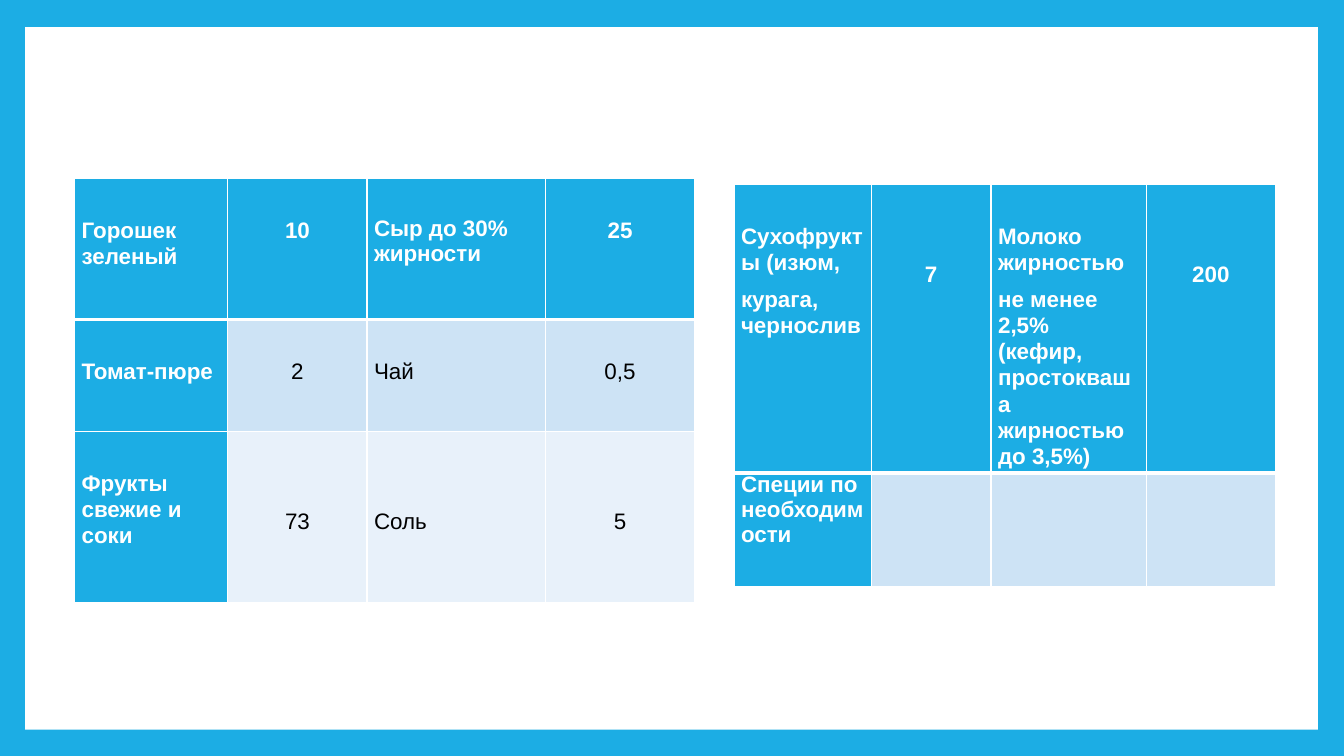
from lxml.etree import SubElement as Sub
from pptx import Presentation
from pptx.dml.color import RGBColor
from pptx.enum.shapes import MSO_SHAPE as Shape
from pptx.enum.text import PP_ALIGN as Align
from pptx.oxml.ns import qn
from pptx.util import Inches, Pt

BLUE = RGBColor(0x1C, 0xAD, 0xE4)
WHITE = RGBColor(0xFF, 0xFF, 0xFF)
BLACK = RGBColor(0, 0, 0)
BANDS = [RGBColor(0xE8, 0xF1, 0xFA), RGBColor(0xCD, 0xE3, 0xF5)]
GAP = 0.38

LEFT = [
    [("Горошек зеленый", 1), ("10", 1), ("Сыр до 30% жирности", 1, 1.0), ("25", 1)],
    [("Томат-пюре", 1), ("2", 1), ("Чай", 1), ("0,5", 1)],
    [("Фрукты свежие и соки", 1), ("73", 2), ("Соль", 2), ("5", 2)],
]
RIGHT = [
    [("Сухофрукты (изюм,\nкурага, чернослив", 1), ("7", 2),
     ("Молоко жирностью\nне менее 2,5% (кефир, простокваша жирностью до 3,5%)", 1),
     ("200", 2)],
    [("Специи по необходимости", 0, 1.0), ("", 0), ("", 0), ("", 0)],
]


def write(frame, text, *, color=BLACK, bold=False, align=Align.LEFT, lead=1.05):
    """Fill a text frame, one paragraph for each line of text."""
    for i, line in enumerate(text.split("\n")):
        para = frame.paragraphs[0] if i == 0 else frame.add_paragraph()
        para.alignment, para.line_spacing = align, lead
        para.space_after = Pt(8 if lead > 1 else 0)
        run = para.add_run()
        run.text = line
        font = run.font
        font.name, font.size, font.bold = "Arial", Pt(16), bold
        font.color.rgb = color


class Deck:
    """Hold the style and the current slide."""

    def __init__(self):
        self.prs = Presentation()
        self.prs.slide_width, self.prs.slide_height = Inches(13.33), Inches(7.5)
        self.slide = self.prs.slides.add_slide(self.prs.slide_layouts[6])
        fill = self.slide.background.fill
        fill.solid()
        fill.fore_color.rgb = BLUE

    def panel(self, x, y, w, h):
        """Add the plain white sheet."""
        box = self.slide.shapes.add_shape(
            Shape.RECTANGLE, Inches(x), Inches(y), Inches(w), Inches(h))
        box.shadow.inherit = False
        box.fill.solid()
        box.fill.fore_color.rgb = WHITE
        box.line.fill.background()

    def edge(self, cell, row):
        """Draw white cell borders, thick between head and body."""
        props = cell._tc.get_or_add_tcPr()
        wide = {"T": row == 1, "B": row == 0}
        for side in "LRTB":
            width = Pt(3 if wide.get(side) else 1)
            line = Sub(props, qn(f"a:ln{side}"), w=str(width))
            Sub(Sub(line, qn("a:solidFill")), qn("a:srgbClr"), val=str(WHITE))

    def cell(self, cell, row, col, text, gap, lead=1.05):
        """Style one cell and write its text."""
        head = row == 0 or col == 0
        self.edge(cell, row)
        cell.fill.solid()
        cell.fill.fore_color.rgb = BLUE if head else BANDS[row % 2]
        cell.margin_left = cell.margin_right = Inches(0.07)
        cell.margin_top, cell.margin_bottom = Inches(gap * GAP), 0
        if text:
            write(cell.text_frame, text, color=WHITE if head else BLACK,
                  bold=head, lead=lead,
                  align=Align.CENTER if col % 2 else Align.LEFT)

    def table(self, x, y, cols, rows, data):
        """Add a table with the given column widths and row heights."""
        grid = self.slide.shapes.add_table(
            len(rows), len(cols), Inches(x), Inches(y),
            Inches(sum(cols)), Inches(sum(rows))).table
        grid.first_col = True
        for col, width in zip(grid.columns, cols):
            col.width = Inches(width)
        for row, high in zip(grid.rows, rows):
            row.height = Inches(high)
        for r, items in enumerate(data):
            for c, item in enumerate(items):
                self.cell(grid.cell(r, c), r, c, *item)


def main():
    """Build the slide and save it."""
    deck = Deck()
    deck.panel(0.25, 0.27, 12.82, 6.97)
    deck.table(0.74, 1.77, [1.52, 1.38, 1.77, 1.48], [1.4, 1.11, 1.7], LEFT)
    deck.table(7.28, 1.83, [1.36, 1.19, 1.54, 1.28], [2.86, 1.13], RIGHT)
    deck.prs.save("out.pptx")


if __name__ == "__main__":
    main()
